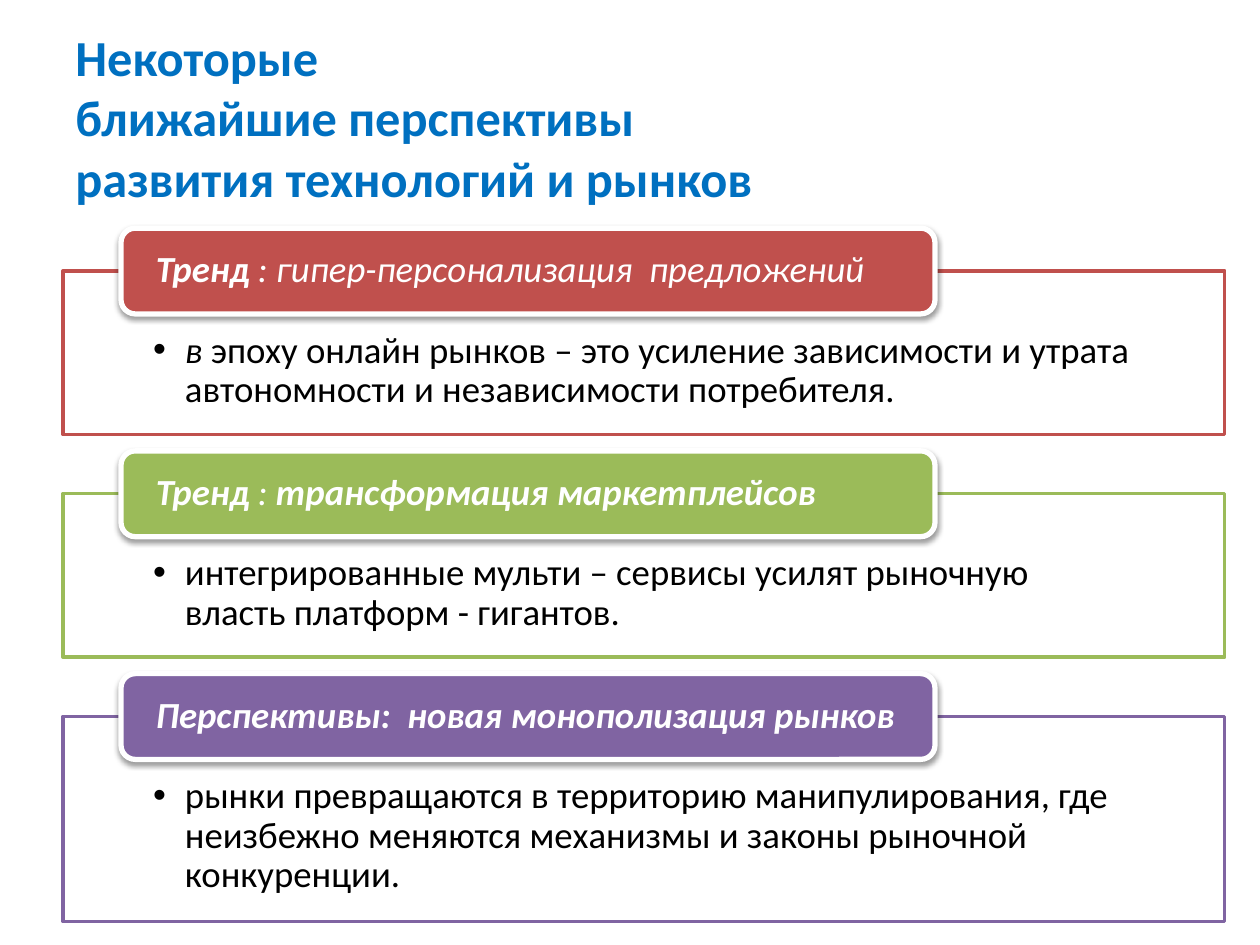
"""Build a slide of three colour-coded market trends, each a tab over a framed panel."""
from dataclasses import dataclass

from lxml.etree import SubElement
from pptx import Presentation
from pptx.dml.color import RGBColor
from pptx.enum.shapes import MSO_SHAPE
from pptx.enum.text import MSO_ANCHOR, PP_ALIGN
from pptx.oxml.ns import qn
from pptx.util import Cm, Pt


@dataclass(frozen=True)
class Theme:
    """Colours, font and type sizes of the slide."""
    font: str = "Calibri"
    title: str = "0070C0"
    body: str = "000000"
    light: str = "FFFFFF"
    title_size: float = 28.8
    text_size: float = 21


@dataclass(frozen=True)
class Run:
    """A stretch of text with one emphasis."""
    text: str
    bold: bool = False
    italic: bool = False


@dataclass(frozen=True)
class Trend:
    """A heading tab with the panel it introduces."""
    heading: tuple[Run, ...]
    detail: tuple[Run, ...]
    accent: str
    height: float = 3.3


THEME = Theme()
PANEL_LEFT, PANEL_TOP, PANEL_WIDTH, PANEL_GAP = 1.27, 5.46, 23.42, 1.19
TAB_LEFT, TAB_WIDTH, TAB_HEIGHT, TAB_RISE = 2.44, 16.41, 1.73, 0.86

TITLE_LINES = ("Некоторые ", "ближайшие перспективы", "развития технологий и рынков")
TRENDS = (
    Trend(
        (Run("Тренд ", True, True), Run(": гипер-персонализация  предложений", italic=True)),
        (Run("в ", italic=True), Run("эпоху онлайн рынков – это усиление зависимости и "
                                     "утрата автономности и независимости потребителя.")),
        "C0504D",
    ),
    Trend(
        (Run("Тренд ", True, True), Run(": ", italic=True),
         Run("трансформация маркетплейсов", True, True)),
        (Run("интегрированные мульти – сервисы усилят рыночную власть платформ - гигантов."),),
        "9BBB59",
    ),
    Trend(
        (Run("Перспективы:  новая монополизация рынков", True, True),),
        (Run("рынки превращаются в территорию манипулирования, где неизбежно меняются "
             "механизмы и законы рыночной конкуренции."),),
        "8064A2", 4.14,
    ),
)


def write_text(shape, runs, *, color, size=THEME.text_size, anchor=MSO_ANCHOR.MIDDLE,
               insets=(0.25, 0.13, 0.25, 0.13), spacing=0.9, bullet=False):
    """Fill a shape with one left-aligned paragraph; a newline run breaks the line."""
    frame = shape.text_frame
    frame.word_wrap = True
    frame.vertical_anchor = anchor
    frame.margin_left, frame.margin_top, frame.margin_right, frame.margin_bottom = map(Cm, insets)
    paragraph = frame.paragraphs[0]
    paragraph.alignment = PP_ALIGN.LEFT
    paragraph.line_spacing = spacing
    if bullet:
        properties = paragraph._p.get_or_add_pPr()
        properties.set("marL", str(Cm(0.64)))
        properties.set("indent", str(Cm(-0.64)))
        SubElement(properties, qn("a:buFont"), typeface="Arial")
        SubElement(properties, qn("a:buChar"), char="•")
    for run in runs:
        if run.text == "\n":
            paragraph.add_line_break()
            continue
        piece = paragraph.add_run()
        piece.text = run.text
        font = piece.font
        font.name, font.size = THEME.font, Pt(size)
        font.bold, font.italic = run.bold, run.italic
        font.color.rgb = RGBColor.from_string(color)


def add_box(slide, kind: MSO_SHAPE, bounds: tuple, fill: str, outline: str, weight: float):
    """Add a filled, outlined shape without a shadow."""
    box = slide.shapes.add_shape(kind, *map(Cm, bounds))
    box.shadow.inherit = False
    box.fill.solid()
    box.fill.fore_color.rgb = RGBColor.from_string(fill)
    box.line.color.rgb = RGBColor.from_string(outline)
    box.line.width = Pt(weight)
    return box


def set_opacity(color_element, percent: int) -> None:
    """Give a colour element an alpha value."""
    SubElement(color_element, qn("a:alpha"), val=str(percent * 1000))


def drop_shadow(shape) -> None:
    """Cast a soft shadow straight down."""
    effects = shape._element.spPr.find(qn("a:effectLst"))
    shadow = SubElement(effects, qn("a:outerShdw"), blurRad=str(Pt(3.1)), dist=str(Pt(1.6)),
                        dir="5400000", rotWithShape="0")
    set_opacity(SubElement(shadow, qn("a:srgbClr"), val="000000"), 38)


def add_trend(slide, trend: Trend, top: float) -> None:
    """Draw the panel of a trend and the tab over its upper edge."""
    panel = add_box(slide, MSO_SHAPE.RECTANGLE, (PANEL_LEFT, top, PANEL_WIDTH, trend.height),
                    THEME.light, trend.accent, 2)
    set_opacity(panel._element.spPr.find(qn("a:solidFill"))[0], 90)
    write_text(panel, trend.detail, color=THEME.body, anchor=MSO_ANCHOR.TOP,
               insets=(1.82, 1.22, 1.82, 0.41), bullet=True)
    tab = add_box(slide, MSO_SHAPE.ROUNDED_RECTANGLE,
                  (TAB_LEFT, top - TAB_RISE, TAB_WIDTH, TAB_HEIGHT),
                  trend.accent, THEME.light, 3)
    drop_shadow(tab)
    write_text(tab, trend.heading, color=THEME.light, insets=(0.62, 0, 0.62, 0))


def add_title(slide) -> None:
    """Place and fill the title placeholder."""
    title = slide.shapes.title
    title.left, title.top, title.width, title.height = map(Cm, (1.27, 0.76, 22.86, 3.18))
    first, *rest = (Run(line, bold=True) for line in TITLE_LINES)
    runs = [first]
    for line in rest:
        runs += [Run("\n"), line]
    write_text(title, runs, color=THEME.title, size=THEME.title_size, spacing=1.0)


def main() -> None:
    """Assemble and save the slide."""
    presentation = Presentation()
    presentation.slide_width, presentation.slide_height = Cm(25.4), Cm(19.05)
    slide = presentation.slides.add_slide(presentation.slide_layouts[5])
    add_title(slide)
    top = PANEL_TOP
    for trend in TRENDS:
        add_trend(slide, trend, top)
        top += trend.height + PANEL_GAP
    presentation.save("out.pptx")


if __name__ == "__main__":
    main()
